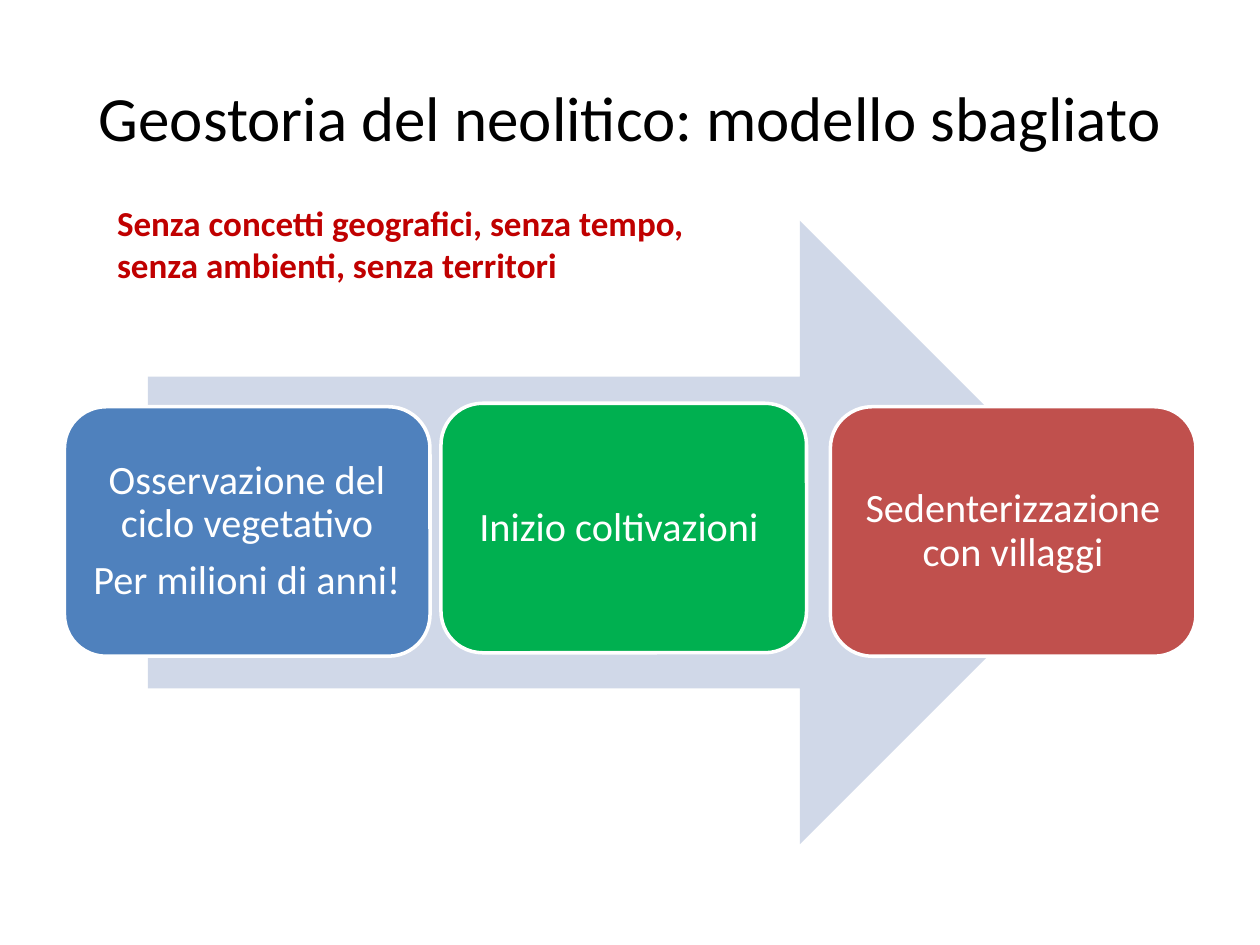
import pptx
import pptx.dml.color
import pptx.enum.shapes
import pptx.enum.text
import pptx.util
from pptx.util import Cm, Pt

FONT = "Calibri"
COLORS = {
    "title": "000000",
    "note": "C00000",
    "arrow": "D0D8E8",
    "white": "FFFFFF",
    "blue": "4F81BD",
    "green": "00B050",
    "red": "C0504D",
}
CARD_WIDTH, CARD_HEIGHT = 7.37, 5.03
# left, top, colour, paragraphs
STAGES = [
    (1.3, 8.2, "blue", ["Osservazione del ciclo vegetativo", "Per milioni di anni!"]),
    (8.89, 8.13, "green", ["Inizio coltivazioni "]),
    (16.74, 8.2, "red", ["Sedenterizzazione con villaggi"]),
]
SHAPES = pptx.enum.shapes.MSO_SHAPE
ALIGN = pptx.enum.text.PP_ALIGN
ANCHOR = pptx.enum.text.MSO_ANCHOR


def rgb(name):
    return pptx.dml.color.RGBColor.from_string(COLORS[name])


def style_paragraph(para, text, size, color, align, bold=False):
    para.text = text
    para.alignment = align
    para.font.name = FONT
    para.font.size = Pt(size)
    para.font.bold = bold
    para.font.color.rgb = rgb(color)


def add_text(page, bounds, text, size, color, align=ALIGN.LEFT,
             anchor=ANCHOR.TOP, bold=False):
    box = page.shapes.add_textbox(*map(Cm, bounds))
    frame = box.text_frame
    frame.word_wrap = True
    frame.vertical_anchor = anchor
    style_paragraph(frame.paragraphs[0], text, size, color, align, bold)


def add_filled_shape(page, kind, bounds, color):
    """Add a flat preset shape without outline or shadow."""
    shape = page.shapes.add_shape(kind, *map(Cm, bounds))
    shape.shadow.inherit = False
    shape.fill.solid()
    shape.fill.fore_color.rgb = rgb(color)
    shape.line.fill.background()
    return shape


def add_card(page, left, top, color, lines):
    card = add_filled_shape(page, SHAPES.ROUNDED_RECTANGLE,
                            (left, top, CARD_WIDTH, CARD_HEIGHT), color)
    card.line.color.rgb = rgb("white")
    card.line.width = Pt(2)
    frame = card.text_frame
    frame.word_wrap = True
    frame.vertical_anchor = ANCHOR.MIDDLE
    # The rounded corners already inset the text.
    frame.margin_left = frame.margin_right = 0
    frame.margin_top = frame.margin_bottom = 0
    for index, line in enumerate(lines):
        para = frame.add_paragraph() if index else frame.paragraphs[0]
        style_paragraph(para, line, 23, "white", ALIGN.CENTER)
        para.line_spacing = 0.9
        para.space_before = Pt(8 if index else 0)


def main():
    deck = pptx.Presentation()
    deck.slide_width, deck.slide_height = Cm(25.4), Cm(19.05)
    page = deck.slides.add_slide(deck.slide_layouts[6])

    add_text(page, (1.27, 0.76, 22.86, 3.18),
             "Geostoria del neolitico: modello sbagliato", 36, "title",
             ALIGN.CENTER, ANCHOR.MIDDLE)
    add_filled_shape(page, SHAPES.RIGHT_ARROW, (2.98, 4.45, 19.43, 12.57), "arrow")
    for stage in STAGES:
        add_card(page, *stage)
    add_text(page, (2.11, 3.94, 12.8, 1.96),
             "Senza concetti geografici, senza tempo, senza ambienti, senza territori",
             20, "note", bold=True)

    deck.save("out.pptx")


if __name__ == "__main__":
    main()
